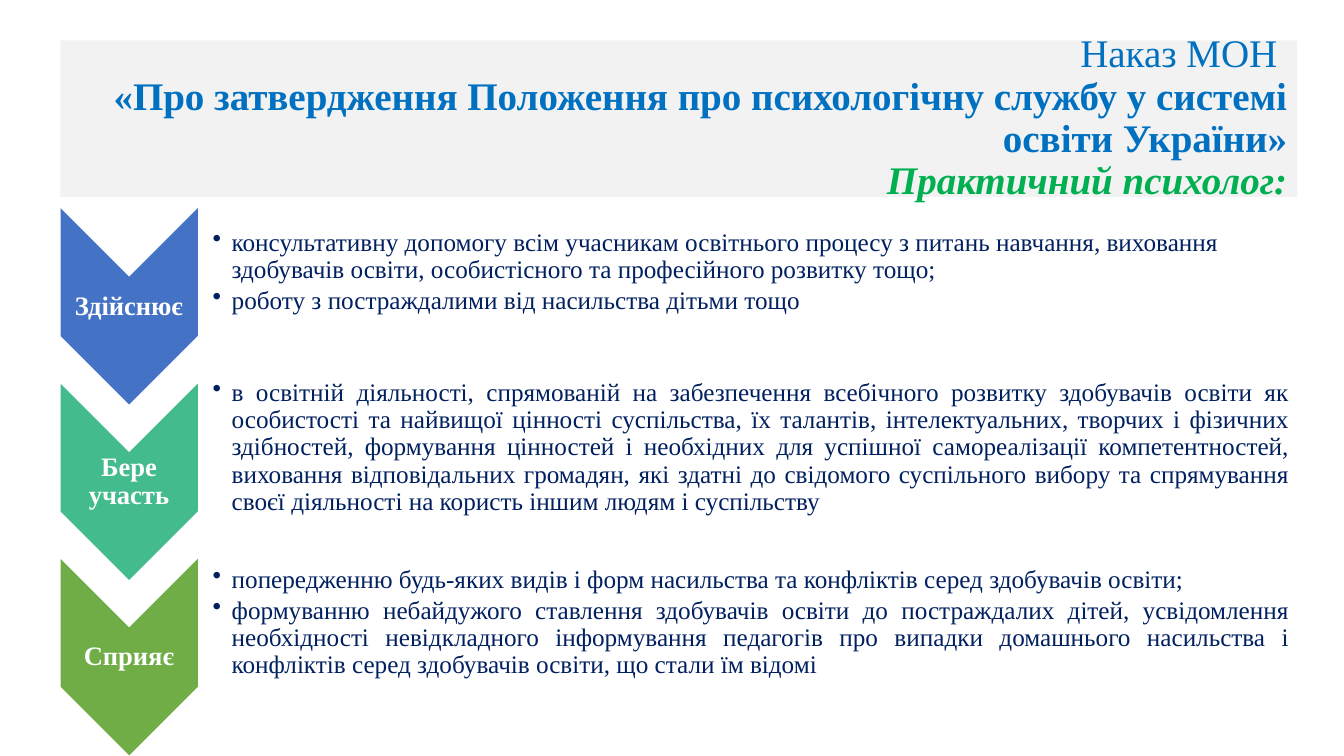
from dataclasses import dataclass

import pptx
import pptx.dml.color
import pptx.enum.shapes
import pptx.enum.text
import pptx.oxml
import pptx.util
from pptx.enum.text import PP_ALIGN as Align
from pptx.util import Cm

FONT = "Times New Roman"
BLUE, GREEN, NAVY, WHITE = "0070C0", "00B050", "002060", "FFFFFF"
TOP, PITCH = 5.41, 4.42


@dataclass
class Point:
    text: str
    align: Align = Align.JUSTIFY


@dataclass
class Step:
    label: str
    fill: str
    points: list[Point]


STEPS = [
    Step("Здійснює", "4472C4", [
        Point("консультативну допомогу всім учасникам освітнього процесу з питань навчання, "
              "виховання здобувачів освіти, особистісного та професійного розвитку тощо;",
              Align.LEFT),
        Point("роботу з постраждалими від насильства дітьми тощо", Align.LEFT),
    ]),
    Step("Бере участь", "43BB8D", [
        Point("в освітній діяльності, спрямованій на забезпечення всебічного розвитку "
              "здобувачів освіти як особистості та найвищої цінності суспільства, їх талантів, "
              "інтелектуальних, творчих і фізичних здібностей, формування цінностей і "
              "необхідних для успішної самореалізації компетентностей, виховання "
              "відповідальних громадян, які здатні до свідомого суспільного вибору та "
              "спрямування своєї діяльності на користь іншим людям і суспільству"),
    ]),
    Step("Сприяє", "70AD47", [
        Point("попередженню будь-яких видів і форм насильства та конфліктів серед "
              "здобувачів освіти;"),
        Point("формуванню небайдужого ставлення здобувачів освіти до постраждалих дітей, "
              "усвідомлення необхідності невідкладного інформування педагогів про випадки "
              "домашнього насильства і конфліктів серед здобувачів освіти, що стали їм відомі"),
    ]),
]


def color(code: str) -> pptx.dml.color.RGBColor:
    return pptx.dml.color.RGBColor.from_string(code)


def add_run(para, text: str, size: float, code: str, bold=False, slant=False) -> None:
    run = para.add_run()
    run.text = text
    font = run.font
    font.name, font.size = FONT, pptx.util.Pt(size)
    font.bold, font.italic = bold, slant
    font.color.rgb = color(code)


def add_form(slide, kind, box: tuple, fill: str):
    form = slide.shapes.add_shape(kind, *map(Cm, box))
    form.shadow.inherit = False
    form.fill.solid()
    form.fill.fore_color.rgb = color(fill)
    form.line.fill.background()
    return form


def add_text(slide, box: tuple, left: float):
    frame = slide.shapes.add_textbox(*map(Cm, box)).text_frame
    frame.word_wrap = True
    frame.vertical_anchor = pptx.enum.text.MSO_ANCHOR.MIDDLE
    frame.margin_left = Cm(left)
    frame.margin_top = frame.margin_right = frame.margin_bottom = Cm(0.03)
    return frame


def set_para(para, align: Align) -> None:
    para.alignment = align
    para.line_spacing = 0.9


def add_bullet(para) -> None:
    props = para._p.get_or_add_pPr()
    props.set("marL", str(Cm(0.48)))
    props.set("indent", str(Cm(-0.48)))
    mark = pptx.oxml.parse_xml(
        '<a:buChar xmlns:a="http://schemas.openxmlformats.org/drawingml/2006/main" char="•"/>')
    props.append(mark)


def draw_title(slide) -> None:
    rect = pptx.enum.shapes.MSO_SHAPE.RECTANGLE
    frame = add_form(slide, rect, (1.52, 1.02, 31.17, 3.94), "F2F2F2").text_frame
    frame.word_wrap = True
    frame.vertical_anchor = pptx.enum.text.MSO_ANCHOR.MIDDLE
    para = frame.paragraphs[0]
    set_para(para, Align.RIGHT)
    add_run(para, "Наказ МОН ", 27.9, BLUE)
    para.add_line_break()
    add_run(para, "«Про затвердження Положення про психологічну службу у системі "
            "освіти України»", 27.9, BLUE, bold=True)
    para.add_line_break()
    add_run(para, "Практичний психолог:", 27.9, GREEN, bold=True, slant=True)


def draw_step(slide, step: Step, top: float) -> None:
    kind = pptx.enum.shapes.MSO_SHAPE.CHEVRON
    arrow = add_form(slide, kind, (0.78, top + 0.58, 4.95, 3.46), step.fill)
    arrow.rotation = 90
    para = add_text(slide, (1.52, top + 1.58, 3.46, 1.47), 0.03).paragraphs[0]
    set_para(para, Align.CENTER)
    add_run(para, step.label, 19, WHITE, bold=True)
    frame = add_text(slide, (5, top, 27.53, 2.9), 0.36)
    for rank, point in enumerate(step.points):
        para = frame.add_paragraph() if rank else frame.paragraphs[0]
        set_para(para, point.align)
        para.space_after = pptx.util.Pt(2.7)
        add_bullet(para)
        add_run(para, point.text, 18, NAVY)


def main() -> None:
    deck = pptx.Presentation()
    deck.slide_width, deck.slide_height = Cm(33.87), Cm(19.05)
    slide = deck.slides.add_slide(deck.slide_layouts[6])
    draw_title(slide)
    for rank, step in enumerate(STEPS):
        draw_step(slide, step, TOP + rank * PITCH)
    deck.save("out.pptx")


if __name__ == "__main__":
    main()
